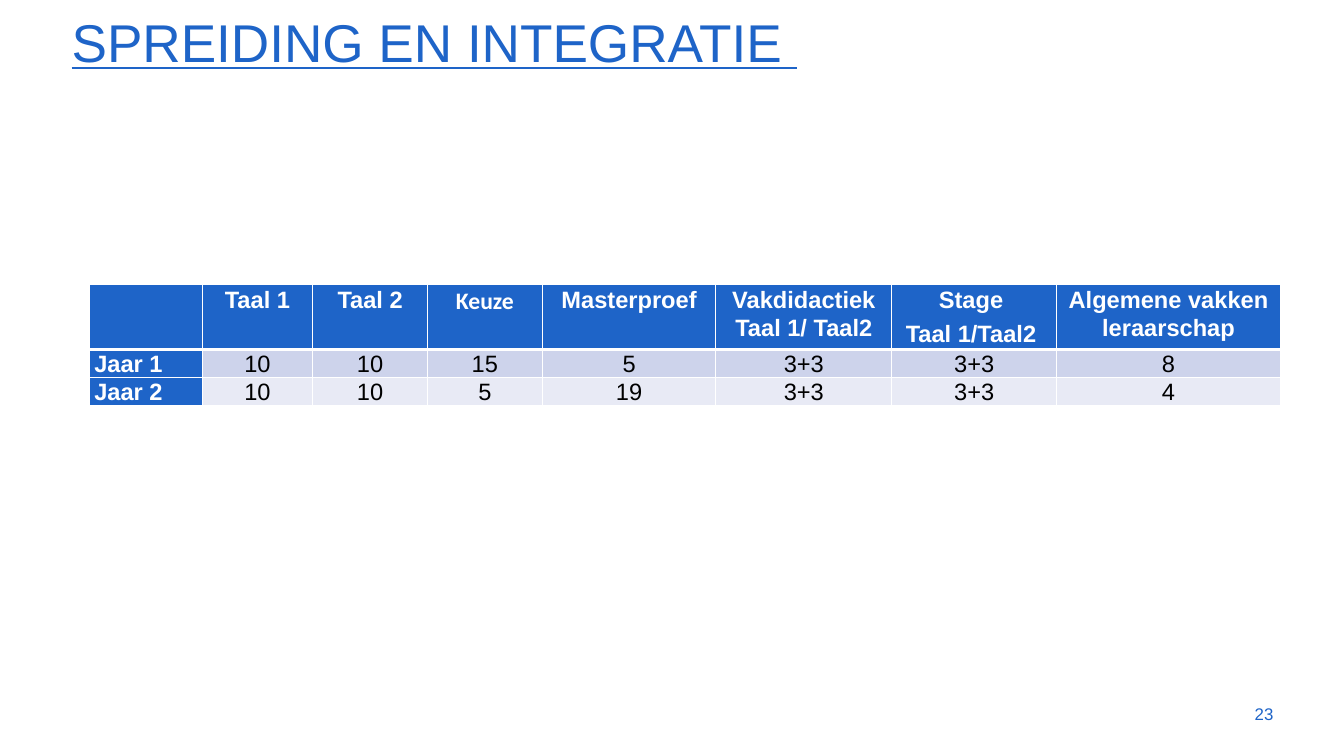
from lxml import etree
from pptx import Presentation
from pptx import util as u
from pptx.dml.color import RGBColor
from pptx.enum import text
from pptx.oxml import ns

WIDTH, HEIGHT = u.Inches(18.96), u.Inches(10.67)
BLUE, WHITE, BLACK = "1E64C8", "FFFFFF", "000000"
BANDS = ["CDD3EB", "E8EAF5"]

# Column widths and row heights in percent of the slide
COLUMNS = [8.39, 8.23, 8.54, 8.54, 12.92, 13.08, 12.29, 16.61]
ROWS = [8.53, 2.44, 2.44]
CONTENT = [
    ["", "Taal 1", "Taal 2", "Keuze", "Masterproef", "Vakdidactiek Taal 1/ Taal2",
     "Stage \nTaal 1/Taal2 ", "Algemene vakken leraarschap"],
    ["Jaar 1", "10", "10", "15", "5", "3+3", "3+3", "8"],
    ["Jaar 2", "10", "10", "5", "19", "3+3", "3+3", "4"],
]


def across(percent):
    return int(WIDTH * percent / 100)


def down(percent):
    return int(HEIGHT * percent / 100)


def color(value):
    return RGBColor.from_string(value)


def style(para, size, ink, align, bold=False, name="Arial"):
    para.alignment = align
    font = para.font
    font.name, font.size, font.bold = name, u.Pt(size), bold
    font.color.rgb = color(ink)


def add_title(page, words):
    title = page.shapes.title
    title.left, title.top = across(4.8), down(1.41)
    title.width, title.height = across(90.61), down(8.81)
    frame = title.text_frame
    frame.text = words
    frame.auto_size = text.MSO_AUTO_SIZE.NONE
    frame.vertical_anchor = text.MSO_ANCHOR.BOTTOM
    para = frame.paragraphs[0]
    style(para, 54, BLUE, text.PP_ALIGN.LEFT)
    para.font.underline = True
    para.line_spacing = 0.9


def set_border(cell, side, points):
    props = cell._tc.get_or_add_tcPr()
    line = etree.SubElement(props, ns.qn(f"a:ln{side}"), w=str(u.Pt(points)))
    fill = etree.SubElement(line, ns.qn("a:solidFill"))
    etree.SubElement(fill, ns.qn("a:srgbClr"), val=WHITE)


def fill_cell(cell, words, row, column):
    heading = row == 0 or column == 0
    # A thick rule separates the header from the years
    thick = {(0, "B"), (1, "T")}
    for side in "LRTB":
        set_border(cell, side, 3 if (row, side) in thick else 1)
    cell.fill.solid()
    cell.fill.fore_color.rgb = color(BLUE if heading else BANDS[row - 1])
    cell.margin_left = cell.margin_right = u.Inches(0.07)
    cell.margin_top = cell.margin_bottom = 0
    cell.text = words
    for para in cell.text_frame.paragraphs:
        para.line_spacing, para.space_after = 1.07, u.Pt(6)
        style(para, 24, WHITE if heading else BLACK,
              text.PP_ALIGN.CENTER if column else text.PP_ALIGN.LEFT,
              bold=heading, name="Calibri" if words == "Keuze" else "Arial")


def add_credits_table(page):
    table = page.shapes.add_table(
        len(ROWS), len(COLUMNS), across(6.65), down(37.68),
        across(sum(COLUMNS)), down(sum(ROWS))).table
    table.first_col = True
    for column, share in zip(table.columns, COLUMNS):
        column.width = across(share)
    for row, share in zip(table.rows, ROWS):
        row.height = down(share)
    for r, line in enumerate(CONTENT):
        for c, words in enumerate(line):
            fill_cell(table.cell(r, c), words, r, c)


def add_page_number(page, number):
    box = page.shapes.add_textbox(across(89.93), down(91.75), across(5.33), down(5.34))
    frame = box.text_frame
    frame.word_wrap = True
    frame.vertical_anchor = text.MSO_ANCHOR.MIDDLE
    frame.text = number
    style(frame.paragraphs[0], 17.1, BLUE, text.PP_ALIGN.RIGHT)


def main():
    deck = Presentation()
    deck.slide_width, deck.slide_height = WIDTH, HEIGHT
    page = deck.slides.add_slide(deck.slide_layouts.get_by_name("Title Only"))
    add_title(page, "SPREIDING EN INTEGRATIE ")
    add_credits_table(page)
    add_page_number(page, "23")
    deck.save("out.pptx")


if __name__ == "__main__":
    main()
